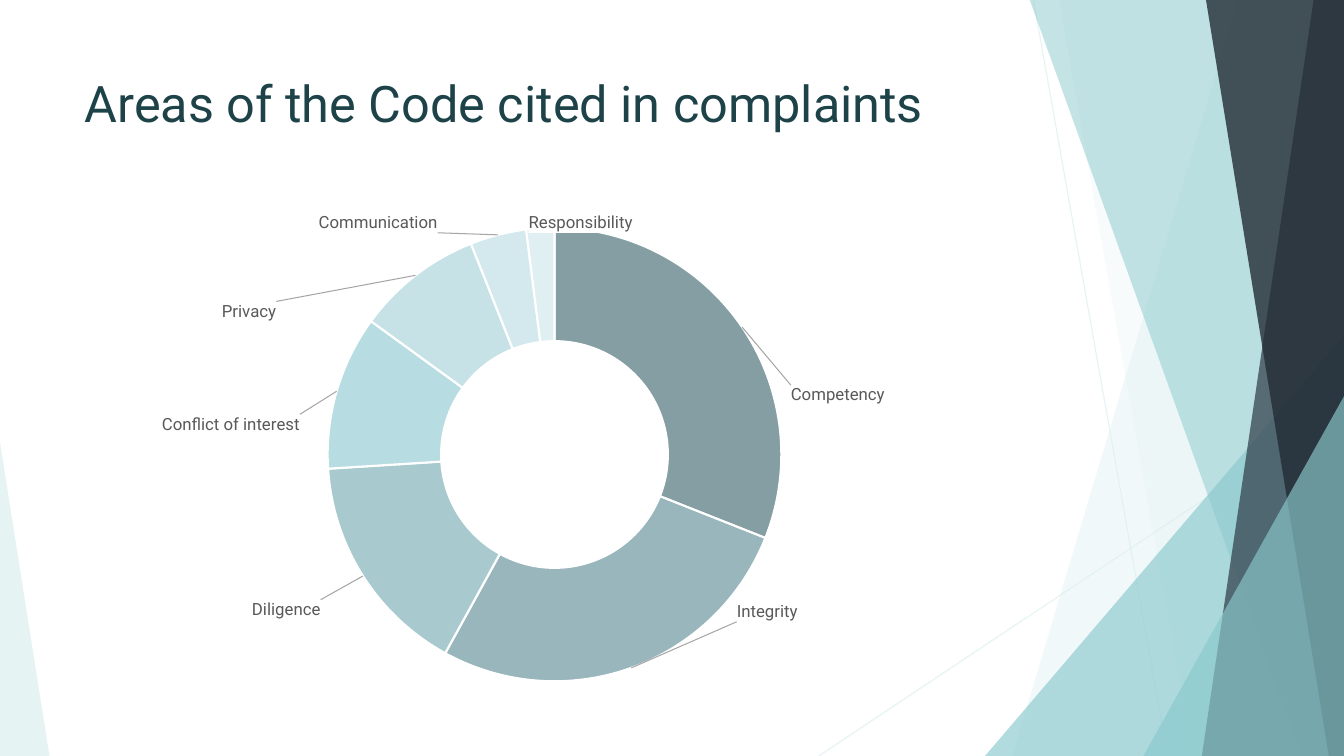
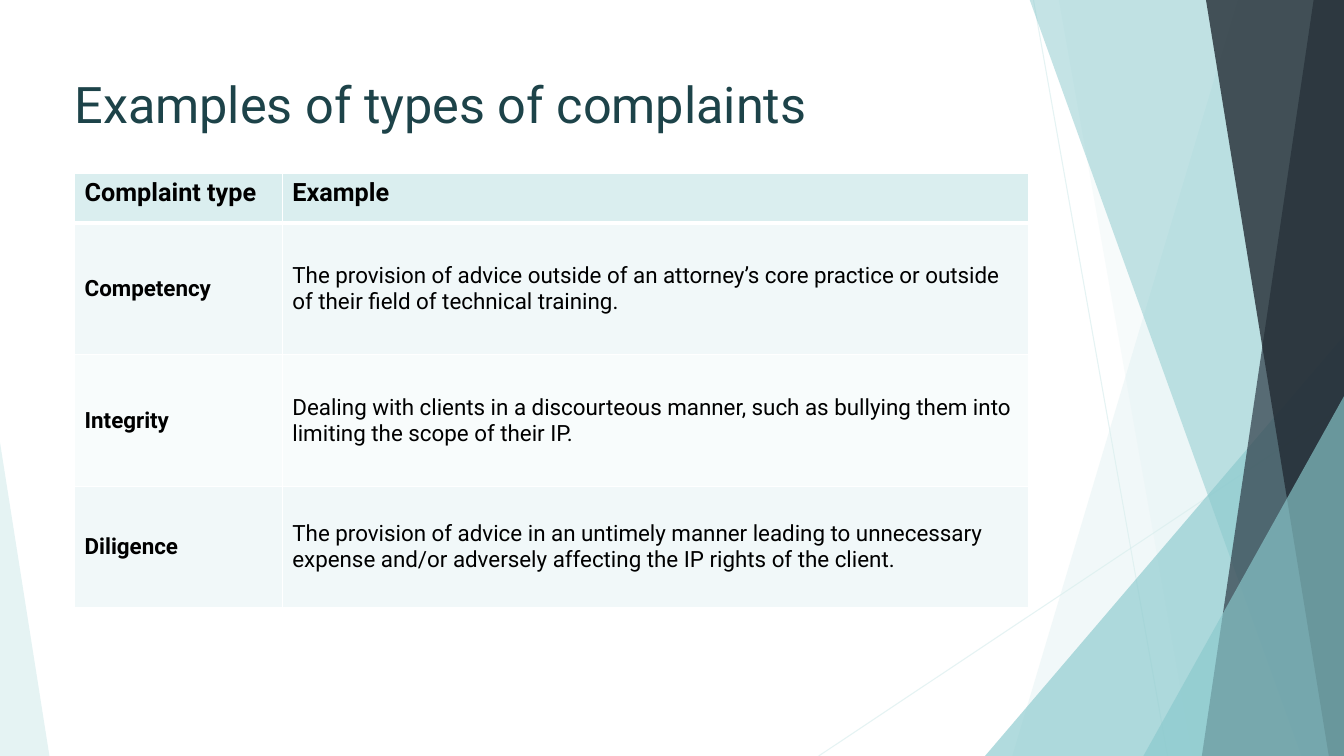
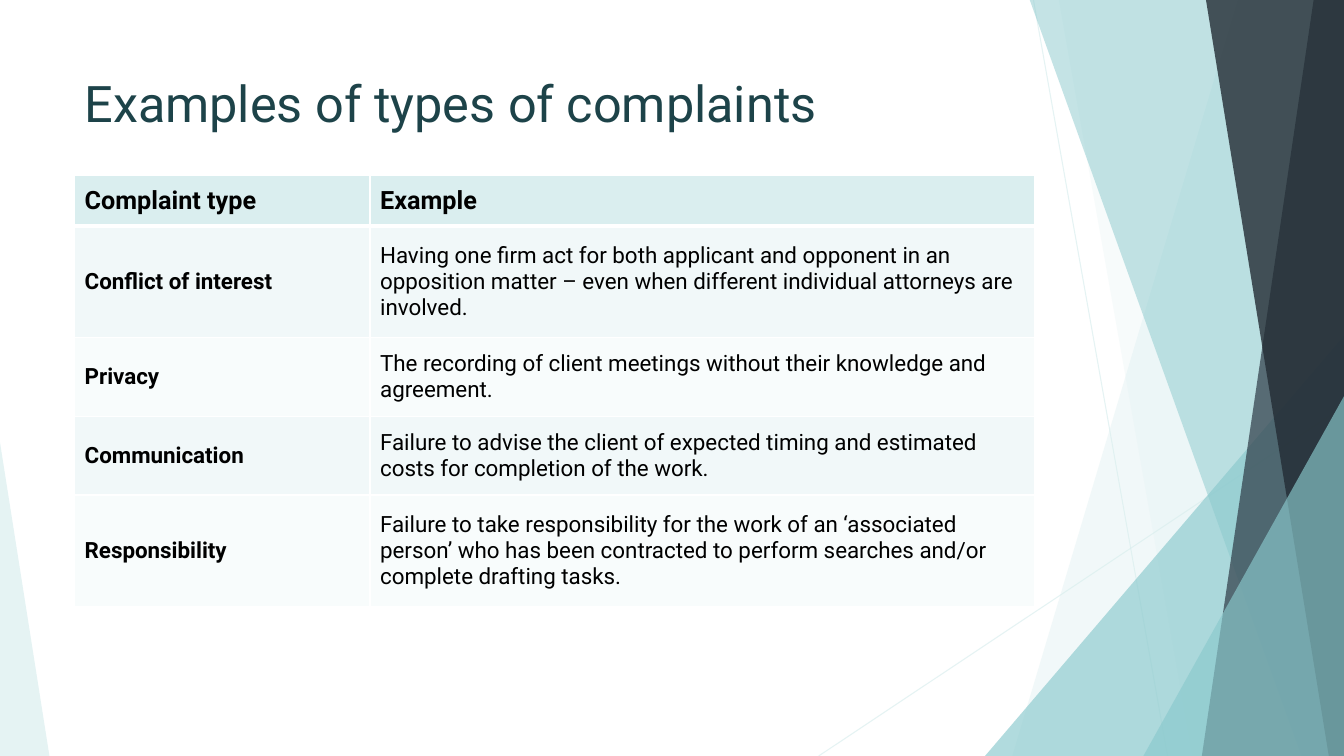
from math import cos, pi, sin

from lxml import etree
from pptx import Presentation
from pptx.chart.data import CategoryChartData
from pptx.dml.color import RGBColor
from pptx.enum.chart import XL_CHART_TYPE
from pptx.enum.shapes import MSO_CONNECTOR, MSO_SHAPE
from pptx.enum.text import MSO_ANCHOR
from pptx.oxml import parse_xml
from pptx.oxml.ns import nsdecls, qn
from pptx.util import Inches, Pt

# Shared theme
FONT = "Roboto"
TITLE, BLACK, WHITE, GREY = "1D4349", "000000", "FFFFFF", "595959"
PALE, TEAL, SLATE, DARK = "DAEEEF", "8AC9CD", "2E3B46", "232C34"
ROW_FILLS = ["F1F8F9", "F8FCFC"]
W, H = 13.33, 7.5


def rgb(value):
    return RGBColor.from_string(value)


def set_alpha(fill_parent, percent):
    clr = next(fill_parent.iter(qn("a:srgbClr")))
    etree.SubElement(clr, qn("a:alpha")).set("val", str(percent * 1000))


def paint(sp, color, alpha):
    sp.shadow.inherit = False
    sp.fill.solid()
    sp.fill.fore_color.rgb = rgb(color)
    sp.line.fill.background()
    set_alpha(sp._element.spPr, alpha)


def add_run(p, text, size, color, bold=False):
    r = p.add_run()
    r.text = text
    f = r.font
    f.name, f.size, f.bold = FONT, Pt(size), bold
    f.color.rgb = rgb(color)


# Background facets
def facet_line(slide, x1, y1, x2, y2):
    line = slide.shapes.add_connector(
        MSO_CONNECTOR.STRAIGHT, Inches(x1), Inches(y1), Inches(x2), Inches(y2))
    line.line.color.rgb = rgb(PALE)
    line.line.width = Pt(0.75)
    set_alpha(line._element.spPr, 70)
    etree.SubElement(line._element.spPr, qn("a:effectLst"))


def facet_band(slide, top_x, bottom_x, color, alpha):
    """Band from a slanted left edge to the right edge of the slide."""
    top = -0.01
    fb = slide.shapes.build_freeform(Inches(top_x), Inches(top))
    corners = [(W, top), (W, H), (bottom_x, H)]
    fb.add_line_segments([(Inches(x), Inches(y)) for x, y in corners])
    paint(fb.convert_to_shape(), color, alpha)


def facet_triangle(slide, x, y, w, apex, color, alpha):
    """Triangle standing on the bottom edge of the slide."""
    sp = slide.shapes.add_shape(
        MSO_SHAPE.ISOSCELES_TRIANGLE, Inches(x), Inches(y), Inches(w), Inches(H - y))
    sp.adjustments[0] = apex
    paint(sp, color, alpha)


def add_background(slide):
    facet_line(slide, 10.25, 0, 11.58, H)
    facet_line(slide, W, 4.03, 8.12, H)
    facet_band(slide, 12.28, 10.04, PALE, 36)
    facet_band(slide, 10.5, 11.83, PALE, 20)
    facet_triangle(slide, 9.77, 3.33, 3.56, 1, TEAL, 66)
    facet_band(slide, 10.21, 12.91, TEAL, 50)
    facet_band(slide, 13.03, 11.92, SLATE, 70)
    facet_band(slide, 11.96, 13.18, DARK, 80)
    facet_triangle(slide, 11.34, 3.93, 1.99, 1, TEAL, 66)
    facet_triangle(slide, 0, 4.39, 0.49, 0, PALE, 70)


def add_title(slide, text, x, y, w, h):
    box = slide.shapes.add_textbox(Inches(x), Inches(y), Inches(w), Inches(h))
    tf = box.text_frame
    tf.word_wrap = True
    add_run(tf.paragraphs[0], text, 36, TITLE)


def new_slide(prs, title, box):
    slide = prs.slides.add_slide(prs.slide_layouts[6])
    add_background(slide)
    add_title(slide, title, *box)
    return slide


# Doughnut chart: name, value, colour, label centre in the chart box
AREAS = [
    ("Competency", 31, "849EA3", (7.57, 1.81)),
    ("Integrity", 27, "98B6BB", (6.87, 3.96)),
    ("Diligence", 16, "A8CACF", (2.1, 3.94)),
    ("Conflict of interest", 11, "B7DCE2", (1.55, 2.1)),
    ("Privacy", 9, "C6E2E7", (1.73, 0.98)),
    ("Communication", 4, "D4E9ED", (3.01, 0.1)),
    ("Responsibility", 2, "E0EFF2", (5.02, 0.1)),
]
RING_X, RING_Y, RING_R = 4.76, 2.4, 2.25

FLAGS = "".join(
    f'<c:show{name} val="{int(name == "CatName")}"/>'
    for name in ("LegendKey", "Val", "CatName", "SerName", "Percent", "BubbleSize"))
LABEL_STYLE = (
    f'<c:spPr><a:solidFill><a:srgbClr val="{WHITE}"/></a:solidFill></c:spPr>'
    '<c:txPr><a:bodyPr/><a:p><a:pPr><a:defRPr sz="1200"><a:solidFill>'
    f'<a:srgbClr val="{GREY}"/></a:solidFill><a:latin typeface="{FONT}"/>'
    '</a:defRPr></a:pPr><a:endParaRPr/></a:p></c:txPr>')


def manual_layout(x, y, extra=""):
    return (f'<c:layout><c:manualLayout>{extra}<c:x val="{x:.4f}"/>'
            f'<c:y val="{y:.4f}"/></c:manualLayout></c:layout>')


def label_xml(w, h):
    """Move each label from the middle of its ring segment to its centre."""
    labels, before = "", 0
    total = sum(value for _, value, _, _ in AREAS)
    for i, (_, value, _, (x, y)) in enumerate(AREAS):
        angle = 2 * pi * (before + value / 2) / total
        before += value
        dx = x - RING_X - 0.75 * RING_R * sin(angle)
        dy = y - RING_Y + 0.75 * RING_R * cos(angle)
        labels += (f'<c:dLbl><c:idx val="{i}"/>{manual_layout(dx / w, dy / h)}'
                   f'{LABEL_STYLE}{FLAGS}</c:dLbl>')
    return (f'<c:dLbls {nsdecls("c", "a")}>{labels}{LABEL_STYLE}{FLAGS}'
            '<c:showLeaderLines val="1"/><c:leaderLines><c:spPr><a:ln w="9525">'
            '<a:solidFill><a:srgbClr val="A6A6A6"/></a:solidFill></a:ln></c:spPr>'
            '</c:leaderLines></c:dLbls>')


def plot_layout(w, h):
    size = 2 * RING_R
    xml = (
        f'<c:layout {nsdecls("c")}><c:manualLayout><c:layoutTarget val="inner"/>'
        '<c:xMode val="edge"/><c:yMode val="edge"/>'
        f'<c:x val="{(RING_X - RING_R) / w:.4f}"/><c:y val="{(RING_Y - RING_R) / h:.4f}"/>'
        f'<c:w val="{size / w:.4f}"/><c:h val="{size / h:.4f}"/>'
        '</c:manualLayout></c:layout>')
    return parse_xml(xml)


def add_doughnut(slide, x, y, w, h):
    data = CategoryChartData()
    data.categories = [area[0] for area in AREAS]
    data.add_series("Series 1", [area[1] for area in AREAS])
    chart = slide.shapes.add_chart(
        XL_CHART_TYPE.DOUGHNUT, Inches(x), Inches(y), Inches(w), Inches(h), data).chart
    chart.has_legend = chart.has_title = False
    chart.font.name, chart.font.size = FONT, Pt(10)
    chart.font.color.rgb = rgb(BLACK)
    plot = chart.plots[0]
    plot.vary_by_categories = True
    series = plot.series[0]
    for i, (_, _, color, _) in enumerate(AREAS):
        fmt = series.points[i].format
        fmt.fill.solid()
        fmt.fill.fore_color.rgb = rgb(color)
        fmt.line.color.rgb = rgb(WHITE)
        fmt.line.width = Pt(1.5)
    series._element.find(qn("c:cat")).addprevious(parse_xml(label_xml(w, h)))
    area = next(chart._chartSpace.iter(qn("c:plotArea")))
    for old in area.findall(qn("c:layout")):
        area.remove(old)
    area.insert(0, plot_layout(w, h))


# Tables
def set_borders(cell, **widths):
    tcPr = cell._tc.get_or_add_tcPr()
    for side in "LRTB":
        ln = etree.SubElement(tcPr, qn(f"a:ln{side}"), w=str(Pt(widths.get(side, 1))))
        fill = etree.SubElement(ln, qn("a:solidFill"))
        etree.SubElement(fill, qn("a:srgbClr"), val=WHITE)


def add_examples(slide, x, y, cols, heights, examples, head_anchor):
    rows = [("Complaint type", "Example")] + examples
    table = slide.shapes.add_table(
        len(rows), len(cols), Inches(x), Inches(y),
        Inches(sum(cols)), Inches(sum(heights))).table
    for col, width in zip(table.columns, cols):
        col.width = Inches(width)
    for i, (texts, height) in enumerate(zip(rows, heights)):
        table.rows[i].height = Inches(height)
        head = i == 0
        for j, text in enumerate(texts):
            cell = table.cell(i, j)
            set_borders(cell, B=3 if head else 1, T=3 if i == 1 else 1)
            cell.fill.solid()
            cell.fill.fore_color.rgb = rgb(PALE if head else ROW_FILLS[(i - 1) % 2])
            cell.vertical_anchor = head_anchor if head else MSO_ANCHOR.MIDDLE
            add_run(cell.text_frame.paragraphs[0], text,
                    18 if head else 16, BLACK, head or j == 0)


CONDUCT = [
    ("Competency", "The provision of advice outside of an attorney’s core practice "
     "or outside of their field of technical training."),
    ("Integrity", "Dealing with clients in a discourteous manner, such as bullying "
     "them into limiting the scope of their IP."),
    ("Diligence", "The provision of advice in an untimely manner leading to unnecessary "
     "expense and/or adversely affecting the IP rights of the client."),
]
DUTIES = [
    ("Conflict of interest", "Having one firm act for both applicant and opponent in an "
     "opposition matter – even when different individual attorneys are involved."),
    ("Privacy", "The recording of client meetings without their knowledge and agreement."),
    ("Communication", "Failure to advise the client of expected timing and estimated "
     "costs for completion of the work."),
    ("Responsibility", "Failure to take responsibility for the work of an ‘associated "
     "person’ who has been contracted to perform searches and/or complete drafting tasks."),
]


def main():
    prs = Presentation()
    prs.slide_width, prs.slide_height = Inches(W), Inches(H)
    title_box = (0.74, 0.67, 9.4, 1.44)

    slide = new_slide(prs, "Areas of the Code cited in complaints", title_box)
    add_doughnut(slide, 0.74, 2.11, 9.4, 4.79)

    examples_title = "Examples of types of complaints"
    slide = new_slide(prs, examples_title, (0.64, 0.68, 9.4, 0.75))
    add_examples(slide, 0.74, 1.72, [2.06, 7.4], [0.49, 1.31, 1.31, 1.2],
                 CONDUCT, MSO_ANCHOR.TOP)

    slide = new_slide(prs, examples_title, title_box)
    add_examples(slide, 0.74, 1.74, [2.93, 6.59], [0.5, 1.11, 0.78, 0.78, 1.11],
                 DUTIES, MSO_ANCHOR.MIDDLE)

    prs.save("out.pptx")


if __name__ == "__main__":
    main()
